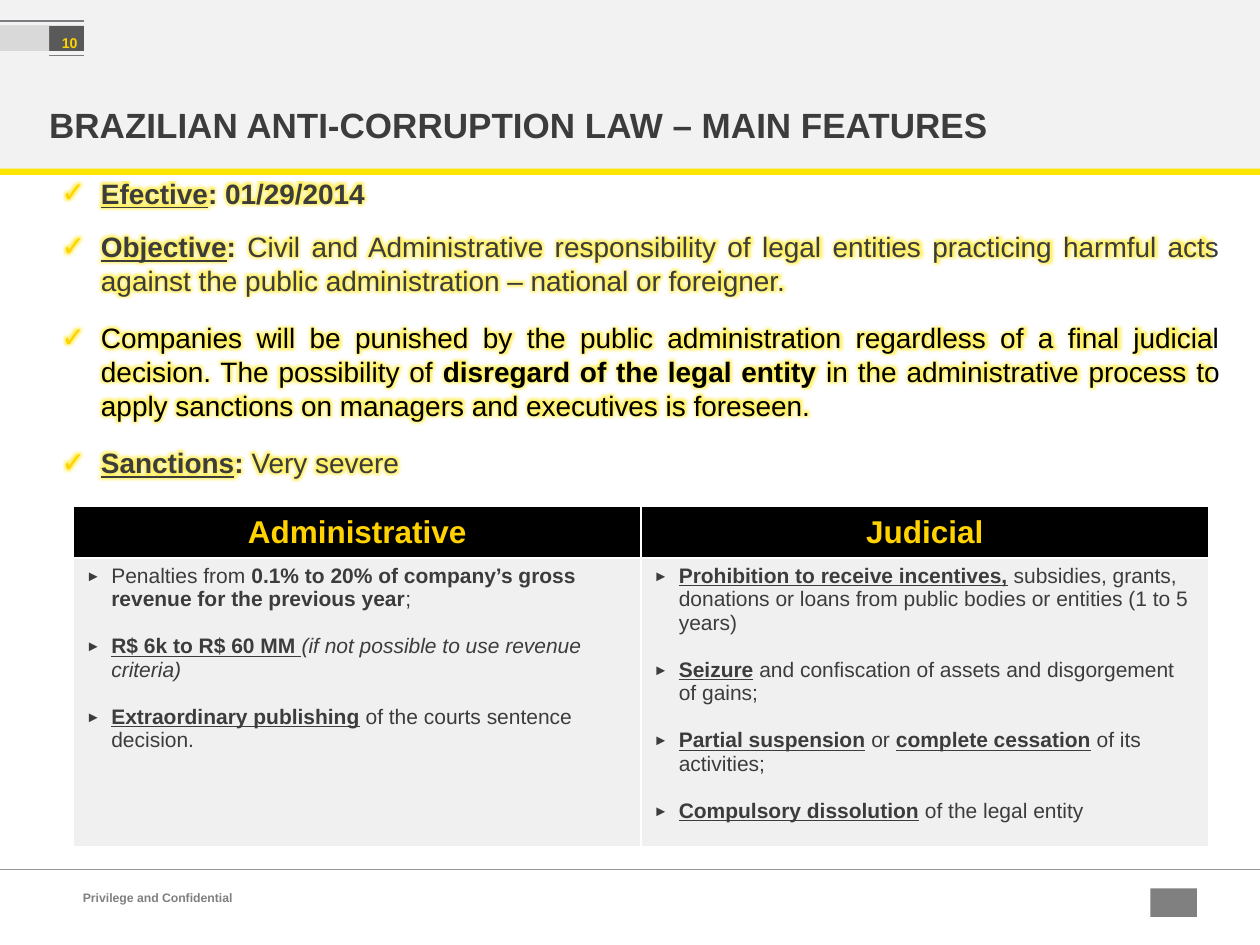
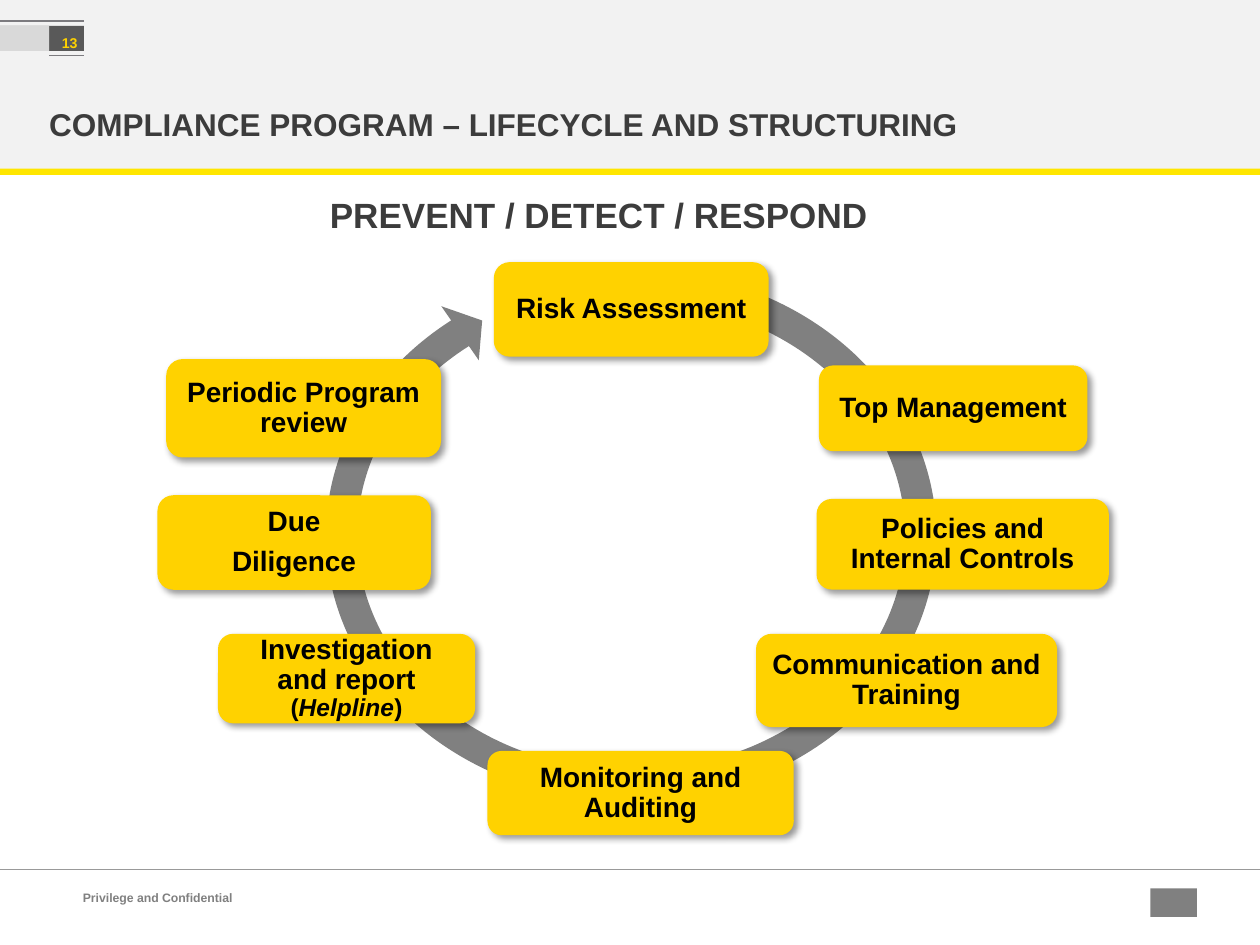
from typing import Any, NamedTuple

from lxml.etree import SubElement
from pptx import Presentation
from pptx.dml.color import RGBColor
from pptx.enum.shapes import MSO_CONNECTOR, MSO_SHAPE as Preset
from pptx.enum.text import MSO_ANCHOR as Anchor, PP_ALIGN as Align
from pptx.oxml import parse_xml
from pptx.oxml.ns import nsdecls, qn
from pptx.util import Pt

FONT = "Arial"
INK, BLACK, WHITE, GREY = "3C3C3C", "000000", "FFFFFF", "808080"
GOLD, YELLOW = "FFD200", "FFE600"
BAND, TAB, TAB_SIDE, TAB_LINE = "F2F2F2", "595959", "D9D9D9", "7C7B7F"
FOOTER_LINE, CELL = "999999", "F0F0F0"

BOLD = {"bold": True}
KEY = {"bold": True, "underline": True}
ITALIC = {"italic": True}


class Box(NamedTuple):
    left: float
    top: float
    width: float
    height: float

    def lengths(self) -> list:
        return [Pt(value) for value in self]


class Bullet(NamedTuple):
    character: str
    indent: float
    color: str
    percent: int = 100


class Run(NamedTuple):
    text: str
    format: dict[str, Any] = {}
    color: str | None = None


class Paragraph(NamedTuple):
    runs: list[Run]
    space_before: float = 0


class Style(NamedTuple):
    size: float
    color: str
    font: dict[str, Any] = {}
    paragraph: dict[str, Any] = {}
    bullet: Bullet | None = None
    glow: bool = False


class Step(NamedTuple):
    box: Box
    paragraphs: list[Paragraph]


def single(text: str) -> list[Paragraph]:
    return [Paragraph([Run(text)])]


CHECK = Bullet("✓", 22.5, GOLD)
TRIANGLE = Bullet("►", 14.4, INK, 70)

FOOTER_STYLE = Style(7, GREY, BOLD)
NUMBER_STYLE = Style(14, GOLD, BOLD, {"alignment": Align.RIGHT})
HEADLINE_STYLE = Style(20, INK, BOLD)
FEATURE_STYLE = Style(16, INK, {}, {"alignment": Align.JUSTIFY}, CHECK, True)
HEADER_STYLE = Style(18, GOLD, BOLD, {"alignment": Align.CENTER})
SANCTION_STYLE = Style(12, INK, bullet=TRIANGLE)
STEP_STYLE = Style(16, BLACK, BOLD, {
    "alignment": Align.CENTER, "line_spacing": 0.9, "space_after": Pt(5.6)})

SANCTION_GAP = 13.4
FEATURES = [
    Paragraph([Run("Efective", KEY), Run(": 01/29/2014", BOLD)]),
    Paragraph([
        Run("Objective", KEY), Run(": ", BOLD),
        Run("Civil and Administrative responsibility of legal entities practicing "
            "harmful acts against the public administration – national or foreigner.")],
        11.4),
    Paragraph([
        Run("Companies will be punished by the public administration regardless of a "
            "final judicial decision. The possibility of ", color=BLACK),
        Run("disregard of the legal entity", BOLD, BLACK),
        Run(" in the administrative process to apply sanctions on managers and "
            "executives is foreseen.", color=BLACK)], 13.7),
    Paragraph([Run("Sanctions", KEY), Run(": ", BOLD), Run("Very severe")], 13.7),
]
SANCTIONS = {
    "Administrative": [
        [Run("Penalties from "),
         Run("0.1% to 20% of company’s gross revenue for the previous year", BOLD),
         Run(";")],
        [Run("R$ 6k to R$ 60 MM ", KEY),
         Run("(if not possible to use revenue criteria)", ITALIC)],
        [Run("Extraordinary publishing", KEY), Run(" of the courts sentence decision.")],
    ],
    "Judicial": [
        [Run("Prohibition to receive incentives,", KEY),
         Run(" subsidies, grants, donations or loans from public bodies or entities "
             "(1 to 5 years)")],
        [Run("Seizure", KEY),
         Run(" and confiscation of assets and disgorgement of gains;")],
        [Run("Partial suspension", KEY), Run(" or "),
         Run("complete cessation", KEY), Run(" of its activities;")],
        [Run("Compulsory dissolution", KEY), Run(" of the legal entity")],
    ],
}

SMALL = {"size": Pt(14)}
STEPS = [
    Step(Box(282.2, 149.8, 157, 54), single("Risk Assessment")),
    Step(Box(468, 208.8, 153.4, 49), single("Top Management")),
    Step(Box(466.6, 285.1, 167, 51.8), single("Policies and Internal Controls")),
    Step(Box(432, 362.2, 172.1, 53.3), single("Communication and Training")),
    Step(Box(278.6, 429.1, 175, 48.2), single("Monitoring and Auditing")),
    Step(Box(124.6, 362.2, 146.9, 51.1), [Paragraph([
        Run("Investigation and report "), Run("(", SMALL),
        Run("Helpline", SMALL | ITALIC), Run(")", SMALL)])]),
    Step(Box(90, 283, 156.2, 54), single("Due") + single("Diligence")),
    Step(Box(95, 205.2, 157, 56.2), single("Periodic Program review")),
]
CYCLE_BOX = Box(176.4, 144, 368.6, 324)
CYCLE_GUIDES = (5500, 330700, 13785200, 17380300, 5800)


def rgb(color: str) -> RGBColor:
    return RGBColor.from_string(color)


def set_values(target: Any, values: dict[str, Any]) -> None:
    for name, value in values.items():
        setattr(target, name, value)


def add_bullet(paragraph: Any, bullet: Bullet) -> None:
    properties = paragraph._p.get_or_add_pPr()
    properties.set("marL", str(Pt(bullet.indent)))
    properties.set("indent", str(-Pt(bullet.indent)))
    color = SubElement(properties, qn("a:buClr"))
    SubElement(color, qn("a:srgbClr"), val=bullet.color)
    SubElement(properties, qn("a:buSzPct"), val=str(bullet.percent * 1000))
    SubElement(properties, qn("a:buFont"), typeface=FONT)
    SubElement(properties, qn("a:buChar"), char=bullet.character)


def add_glow(run: Any) -> None:
    """Put a yellow glow behind a run whose colour is already set."""
    glow = parse_xml(
        f'<a:effectLst {nsdecls("a")}><a:glow rad="{Pt(5)}"><a:srgbClr val="{YELLOW}">'
        '<a:alpha val="60000"/></a:srgbClr></a:glow></a:effectLst>')
    run._r.get_or_add_rPr().find(qn("a:solidFill")).addnext(glow)


def write(frame: Any, paragraphs: list[Paragraph], style: Style) -> None:
    for index, content in enumerate(paragraphs):
        paragraph = frame.add_paragraph() if index else frame.paragraphs[0]
        set_values(paragraph, style.paragraph)
        if content.space_before:
            paragraph.space_before = Pt(content.space_before)
        if style.bullet:
            add_bullet(paragraph, style.bullet)
        for part in content.runs:
            run = paragraph.add_run()
            run.text = part.text
            defaults = {"name": FONT, "size": Pt(style.size), "bold": False}
            set_values(run.font, defaults | style.font | part.format)
            run.font.color.rgb = rgb(part.color or style.color)
            if style.glow:
                add_glow(run)


def set_margins(frame: Any, left: float, top: float, right: float, bottom: float) -> None:
    set_values(frame, {"margin_left": Pt(left), "margin_top": Pt(top),
                       "margin_right": Pt(right), "margin_bottom": Pt(bottom)})


def add_text(slide: Any, box: Box, paragraphs: list[Paragraph], style: Style) -> Any:
    frame = slide.shapes.add_textbox(*box.lengths()).text_frame
    frame.word_wrap = True
    write(frame, paragraphs, style)
    return frame


def add_filled(slide: Any, box: Box, color: str, preset: Any = Preset.RECTANGLE) -> Any:
    shape = slide.shapes.add_shape(preset, *box.lengths())
    shape.shadow.inherit = False
    shape.fill.solid()
    shape.fill.fore_color.rgb = rgb(color)
    shape.line.fill.background()
    return shape


def add_rule(slide: Any, left: float, right: float, top: float, color: str) -> None:
    rule = slide.shapes.add_connector(
        MSO_CONNECTOR.STRAIGHT, Pt(left), Pt(top), Pt(right), Pt(top))
    rule.line.color.rgb = rgb(color)
    rule.line.width = Pt(0.75)
    SubElement(rule._element.spPr, qn("a:effectLst"))


def add_page(presentation: Any, number: int, title: str, title_size: float) -> Any:
    """Add a slide with the shared title band, number tab and footer."""
    slide = presentation.slides.add_slide(presentation.slide_layouts[6])
    add_rule(slide, 0, 720, 496.8, FOOTER_LINE)
    add_filled(slide, Box(657.4, 507.6, 26.6, 16.4), GREY)
    add_text(slide, Box(40.3, 505.4, 617, 15.8),
             single("Privilege and Confidential"), FOOTER_STYLE)

    add_filled(slide, Box(0, 0, 720, 97), BAND)
    frame = add_text(slide, Box(28.1, 53.3, 666.7, 35.3), single(title),
                     HEADLINE_STYLE._replace(size=title_size))
    set_margins(frame, 0, 3.6, 7.2, 3.6)
    frame.vertical_anchor = Anchor.MIDDLE
    add_filled(slide, Box(0, 96.4, 720, 3.6), YELLOW)

    frame = add_filled(slide, Box(0, 14.8, 48, 14.4), TAB).text_frame
    set_margins(frame, 0, 0, 3.6, 0)
    frame.vertical_anchor = Anchor.MIDDLE
    write(frame, single(str(number)), NUMBER_STYLE)
    frame.paragraphs[0].runs[0]._r.get_or_add_rPr().set("baseline", "-3000")
    add_rule(slide, 0, 48, 12, TAB_LINE)
    add_rule(slide, 28.1, 48, 31.7, TAB_LINE)
    add_filled(slide, Box(0, 14.8, 28.1, 14.4), TAB_SIDE)
    return slide


def fill_cell(cell: Any, color: str, paragraphs: list[Paragraph], style: Style) -> None:
    cell.fill.solid()
    cell.fill.fore_color.rgb = rgb(color)
    write(cell.text_frame, paragraphs, style)


def add_sanctions_table(slide: Any) -> None:
    box = Box(42, 289.4, 648.6, 194.5)
    table = slide.shapes.add_table(2, len(SANCTIONS), *box.lengths()).table
    for row, height in zip(table.rows, (29.5, 165)):
        row.height = Pt(height)
    for column, (heading, items) in enumerate(SANCTIONS.items()):
        header = table.cell(0, column)
        header.vertical_anchor = Anchor.MIDDLE
        fill_cell(header, BLACK, single(heading), HEADER_STYLE)
        paragraphs = [Paragraph(runs, SANCTION_GAP if index else 0)
                      for index, runs in enumerate(items)]
        fill_cell(table.cell(1, column), CELL, paragraphs, SANCTION_STYLE)


def add_step(slide: Any, step: Step) -> None:
    shape = add_filled(slide, step.box, GOLD, Preset.ROUNDED_RECTANGLE)
    shadow = parse_xml(
        f'<a:outerShdw {nsdecls("a")} blurRad="{Pt(4)}" dist="{Pt(3)}" dir="2700000" '
        f'rotWithShape="0"><a:srgbClr val="{BLACK}"><a:alpha val="40000"/></a:srgbClr>'
        '</a:outerShdw>')
    shape._element.spPr.find(qn("a:effectLst")).append(shadow)
    frame = shape.text_frame
    set_margins(frame, 6.5, 6.5, 6.5, 6.5)
    set_values(frame, {"word_wrap": True, "vertical_anchor": Anchor.MIDDLE})
    write(frame, step.paragraphs, STEP_STYLE)


def add_features_slide(presentation: Any) -> None:
    slide = add_page(presentation, 10, "BRAZILIAN ANTI-CORRUPTION LAW – MAIN FEATURES", 20)
    add_text(slide, Box(28.1, 97.2, 676.1, 392.4), FEATURES, FEATURE_STYLE)
    add_sanctions_table(slide)


def add_lifecycle_slide(presentation: Any) -> None:
    slide = add_page(presentation, 13, "COMPLIANCE PROGRAM – LIFECYCLE AND STRUCTURING", 18)
    add_text(slide, Box(181.4, 107.3, 329.8, 31.7),
             single("PREVENT / DETECT / RESPOND"), HEADLINE_STYLE)
    cycle = add_filled(slide, CYCLE_BOX, GREY, Preset.CIRCULAR_ARROW)
    for index, guide in enumerate(CYCLE_GUIDES):
        cycle.adjustments[index] = guide / 100000
    for step in STEPS:
        add_step(slide, step)


def main() -> None:
    presentation = Presentation()
    presentation.slide_width, presentation.slide_height = Pt(720), Pt(540)
    add_features_slide(presentation)
    add_lifecycle_slide(presentation)
    presentation.save("out.pptx")


if __name__ == "__main__":
    main()
